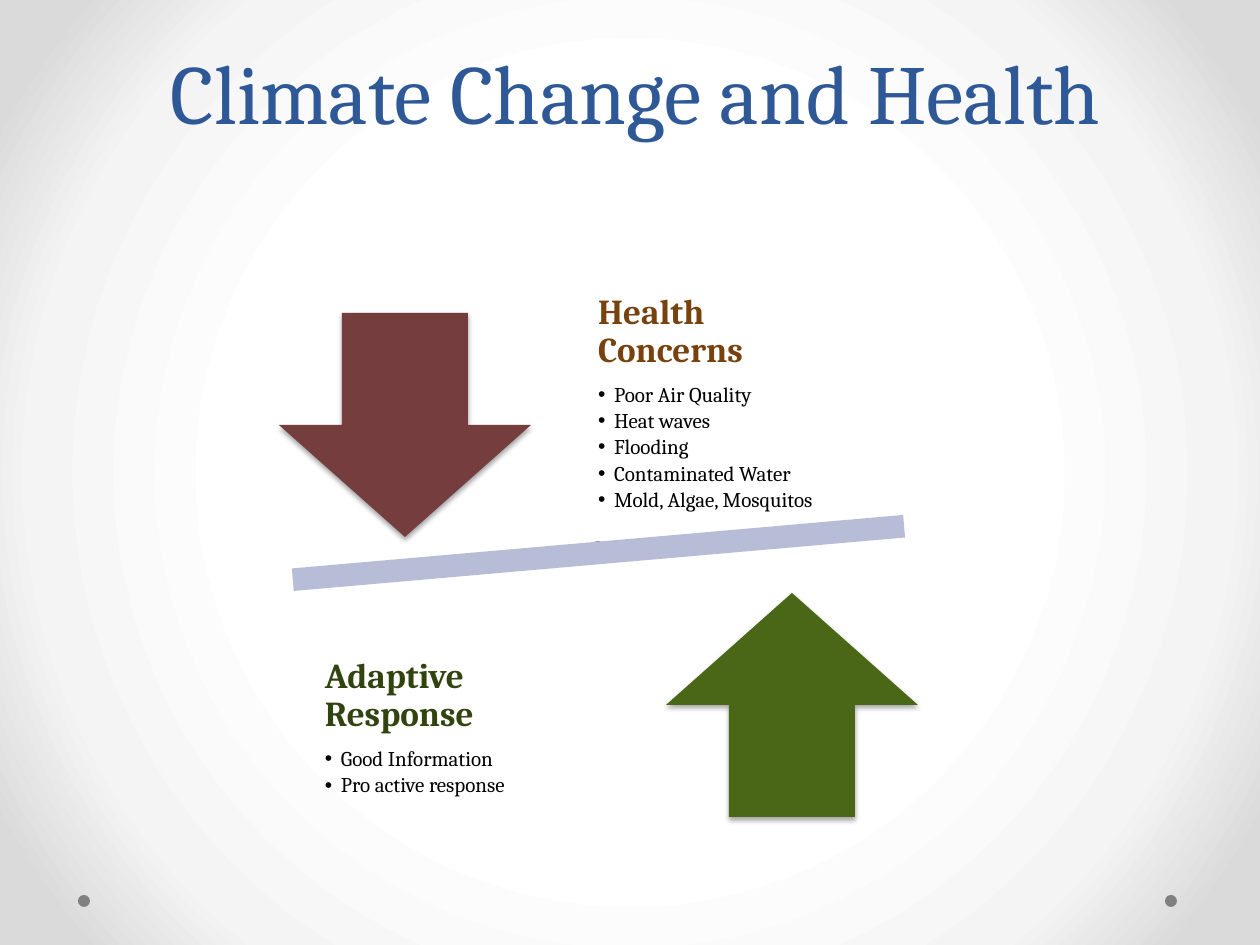
from dataclasses import dataclass

from lxml import etree
from pptx import Presentation
from pptx import util as u
from pptx.dml.color import RGBColor
from pptx.enum import shapes, text
from pptx.oxml import ns, parse_xml

PX = 914400 / 126


@dataclass(frozen=True)
class Theme:
    font: str = "Cambria"
    title: str = "2F5897"
    body: str = "000000"
    dot: str = "808080"
    beam: str = "B7BDD6"
    title_size: int = 48
    heading_size: int = 20
    bullet_size: int = 12
    background: tuple = ((50, "FFFFFF"), (76, "F4F4F4"), (92, "DADADA"))


@dataclass(frozen=True)
class Box:
    left: int
    top: int
    width: int
    height: int

    def lengths(self) -> list[int]:
        return [px(n) for n in (self.left, self.top, self.width, self.height)]


@dataclass(frozen=True)
class Figure:
    kind: shapes.MSO_SHAPE
    box: Box
    color: str
    rotation: int = 0
    shadow: bool = False


@dataclass(frozen=True)
class Topic:
    placeholder: int
    box: Box
    heading: str
    color: str
    bullets: tuple[str, ...]


THEME = Theme()
SHAPE = shapes.MSO_SHAPE
DOTS = [Figure(SHAPE.OVAL, Box(left, top, 12, 12), THEME.dot)
        for left, top in ((1165, 895), (78, 895), (592, 541))]
FIGURES = DOTS + [
    Figure(SHAPE.MATH_MINUS, Box(181, 505, 835, 96), THEME.beam, rotation=-5),
    Figure(SHAPE.DOWN_ARROW, Box(279, 313, 252, 224), "753D3D", shadow=True),
    Figure(SHAPE.UP_ARROW, Box(666, 593, 252, 224), "4A6717", shadow=True),
]
TOPICS = [
    Topic(1, Box(578, 285, 268, 236), "Health Concerns", "77420D",
          ("Poor Air Quality", "Heat waves", "Flooding",
           "Contaminated Water", "Mold, Algae, Mosquitos")),
    Topic(2, Box(305, 610, 268, 236), "Adaptive Response", "314410",
          ("Good Information", "Pro active response")),
]


def px(length: int) -> int:
    return round(length * PX)


def place(shape, box: Box) -> None:
    shape.left, shape.top, shape.width, shape.height = box.lengths()


def add_run(paragraph, wording: str, size: int, color: str, bold: bool = False) -> None:
    run = paragraph.add_run()
    run.text = wording
    run.font.name = THEME.font
    run.font.size = u.Pt(size)
    run.font.bold = bold
    run.font.color.rgb = RGBColor.from_string(color)


def paint_background(slide) -> None:
    slide.background.fill.gradient()
    old = slide.element.find(".//" + ns.qn("a:gradFill"))
    stops = "".join(f'<a:gs pos="{position * 1000}"><a:srgbClr val="{color}"/></a:gs>'
                    for position, color in THEME.background)
    old.getparent().replace(old, parse_xml(
        f'<a:gradFill {ns.nsdecls("a")} rotWithShape="1"><a:gsLst>{stops}</a:gsLst>'
        '<a:path path="circle"><a:fillToRect l="50000" t="50000" r="50000" b="50000"/>'
        '</a:path></a:gradFill>'))


def add_shadow(shape) -> None:
    effects = shape.element.spPr.find(ns.qn("a:effectLst"))
    effects.append(parse_xml(
        f'<a:outerShdw {ns.nsdecls("a")} blurRad="{u.Pt(3.1)}" dist="{u.Pt(1.8)}" '
        'dir="5400000" rotWithShape="0"><a:srgbClr val="000000">'
        '<a:alpha val="35000"/></a:srgbClr></a:outerShdw>'))


def draw_figure(slide, figure: Figure) -> None:
    shape = slide.shapes.add_shape(figure.kind, *figure.box.lengths())
    shape.rotation = figure.rotation
    shape.fill.solid()
    shape.fill.fore_color.rgb = RGBColor.from_string(figure.color)
    shape.line.fill.background()
    shape.shadow.inherit = False
    if figure.shadow:
        add_shadow(shape)


def draw_title(slide) -> None:
    title = slide.shapes.title
    place(title, Box(100, 97, 1071, 151))
    frame = title.text_frame
    frame.auto_size = text.MSO_AUTO_SIZE.NONE
    frame.vertical_anchor = text.MSO_ANCHOR.BOTTOM
    paragraph = frame.paragraphs[0]
    paragraph.alignment = text.PP_ALIGN.CENTER
    add_run(paragraph, "Climate Change and Health", THEME.title_size, THEME.title)
    paragraph.add_line_break()
    end = etree.SubElement(paragraph._p, ns.qn("a:endParaRPr"), sz=str(THEME.title_size * 100))
    etree.SubElement(end, ns.qn("a:latin"), typeface=THEME.font)


def format_paragraph(paragraph, after: float, indent: int, bullet: str = "") -> None:
    paragraph.alignment = text.PP_ALIGN.LEFT
    paragraph.line_spacing = 0.9
    paragraph.space_before = u.Pt(0)
    paragraph.space_after = u.Pt(after)
    properties = paragraph._p.get_or_add_pPr()
    properties.set("marL", str(px(indent)))
    properties.set("indent", str(-px(indent)))
    if bullet:
        etree.SubElement(properties, ns.qn("a:buChar"), char=bullet)
    else:
        etree.SubElement(properties, ns.qn("a:buNone"))


def draw_topic(slide, topic: Topic) -> None:
    body = slide.placeholders[topic.placeholder]
    place(body, topic.box)
    frame = body.text_frame
    frame.word_wrap = True
    frame.auto_size = text.MSO_AUTO_SIZE.NONE
    frame.vertical_anchor = text.MSO_ANCHOR.MIDDLE
    frame.margin_left = frame.margin_right = frame.margin_top = frame.margin_bottom = px(20)
    heading = frame.paragraphs[0]
    format_paragraph(heading, after=8.2, indent=0)
    add_run(heading, topic.heading, THEME.heading_size, topic.color, bold=True)
    for wording in topic.bullets:
        paragraph = frame.add_paragraph()
        paragraph.level = 1
        format_paragraph(paragraph, after=2.1, indent=16, bullet="•")
        add_run(paragraph, wording, THEME.bullet_size, THEME.body)


def main() -> None:
    presentation = Presentation()
    presentation.slide_width, presentation.slide_height = u.Inches(10), u.Inches(7.5)
    slide = presentation.slides.add_slide(presentation.slide_layouts.get_by_name("Two Content"))
    paint_background(slide)
    draw_title(slide)
    for figure in FIGURES:
        draw_figure(slide, figure)
    for topic in TOPICS:
        draw_topic(slide, topic)
    presentation.save("out.pptx")


if __name__ == "__main__":
    main()
